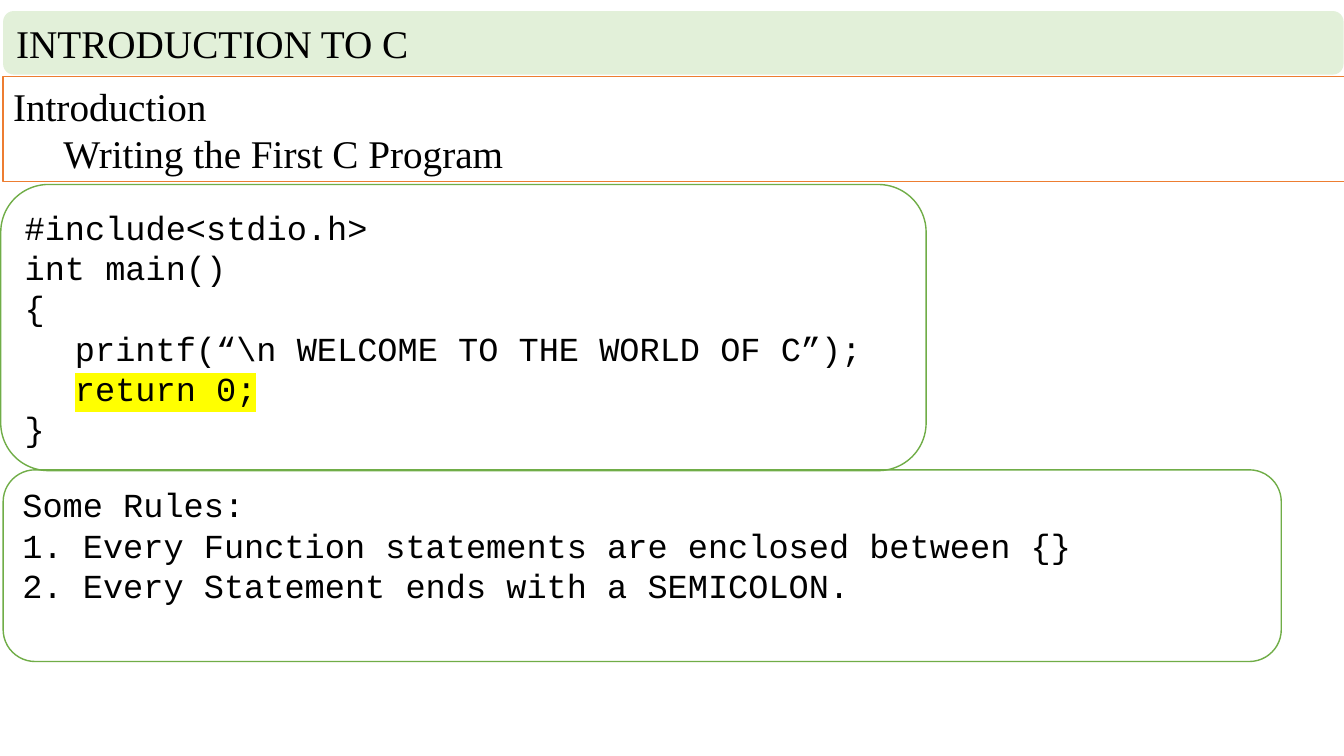
from lxml import etree
from pptx import Presentation, util as u
from pptx.dml.color import RGBColor
from pptx.enum import shapes, text
from pptx.oxml.ns import qn

BLACK = RGBColor(0x00, 0x00, 0x00)
WHITE = RGBColor(0xFF, 0xFF, 0xFF)
MINT = RGBColor(0xE2, 0xF0, 0xD9)
GREEN = RGBColor(0x70, 0xAD, 0x47)
ORANGE = RGBColor(0xED, 0x7D, 0x31)
YELLOW = RGBColor(0xFF, 0xFF, 0x00)

ROUND = shapes.MSO_SHAPE.FLOWCHART_ALTERNATE_PROCESS
RECT = shapes.MSO_SHAPE.RECTANGLE


class Deck:
    head = ("Times New Roman", 28)
    code = ("Courier New", 24)
    indent = u.Cm(1.27)

    def __init__(self):
        self.show = Presentation()
        self.show.slide_width = u.Cm(33.87)
        self.show.slide_height = u.Cm(19.05)
        self.slide = self.show.slides.add_slide(self.show.slide_layouts[6])

    def panel(self, kind, area, lines, style, fill=None, edge=None, top=False):
        box = self.slide.shapes.add_shape(kind, *map(u.Cm, area))
        box.shadow.inherit = False
        if fill is None:
            box.fill.background()
        else:
            box.fill.solid()
            box.fill.fore_color.rgb = fill
        if edge is None:
            box.line.fill.background()
        else:
            box.line.color.rgb = edge
            box.line.width = u.Pt(1)
        frame = box.text_frame
        frame.word_wrap = True
        anchor = text.MSO_ANCHOR
        frame.vertical_anchor = anchor.TOP if top else anchor.MIDDLE
        for i, (level, words) in enumerate(lines):
            para = frame.add_paragraph() if i else frame.paragraphs[0]
            self.line(para, level, words, style)
        return frame

    def line(self, para, level, words, style):
        para.add_run().text = words
        para.alignment = text.PP_ALIGN.LEFT
        para.level = level
        props = para._p.get_or_add_pPr()
        props.set("marL", str(level * self.indent))
        props.set("indent", "0")
        para.font.name = style[0]
        para.font.size = u.Pt(style[1])
        para.font.color.rgb = BLACK

    def mark(self, para, color):
        props = para.runs[0].font._element
        light = etree.SubElement(props, qn("a:highlight"))
        etree.SubElement(light, qn("a:srgbClr"), val=str(color))

    def save(self):
        self.show.save("out.pptx")


def main():
    deck = Deck()
    deck.panel(ROUND, (0.08, 0.28, 33.78, 1.6),
               [(0, "INTRODUCTION TO C")], deck.head, fill=MINT)
    deck.panel(RECT, (0.08, 1.93, 33.83, 2.64),
               [(0, "Introduction"), (1, "Writing the First C Program")],
               deck.head, fill=WHITE, edge=ORANGE)
    code = deck.panel(ROUND, (0.02, 4.65, 23.32, 7.21), [
        (0, "#include<stdio.h>"),
        (0, "int main()"),
        (0, "{"),
        (1, "printf(“\\n WELCOME TO THE WORLD OF C”);"),
        (1, "return 0;"),
        (0, "}"),
    ], deck.code, edge=GREEN)
    deck.mark(code.paragraphs[4], YELLOW)
    deck.panel(ROUND, (0.08, 11.84, 32.21, 4.83), [
        (0, "Some Rules:"),
        (0, "1. Every Function statements are enclosed between {}"),
        (0, "2. Every Statement ends with a SEMICOLON."),
    ], deck.code, edge=GREEN, top=True)
    deck.save()


if __name__ == "__main__":
    main()
